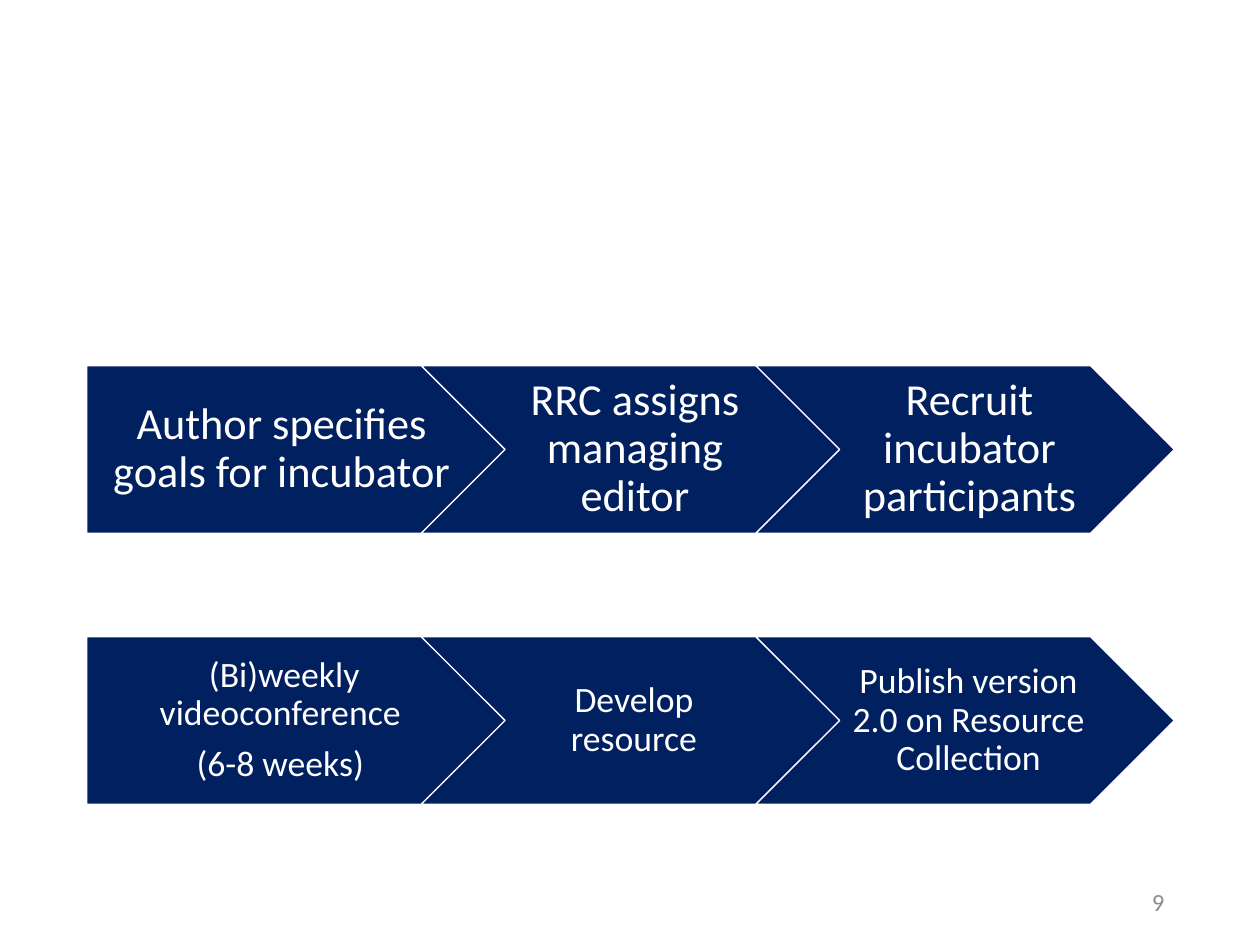
from dataclasses import dataclass

from pptx import Presentation
from pptx.dml.color import RGBColor as RGB
from pptx.enum.shapes import MSO_SHAPE as SHAPE
from pptx.enum.text import MSO_ANCHOR as ANCHOR, PP_ALIGN as ALIGN
from pptx.util import Inches, Pt


@dataclass(frozen=True)
class Theme:
    font: str = "Calibri"
    navy: RGB = RGB(0x00, 0x20, 0x60)
    white: RGB = RGB(0xFF, 0xFF, 0xFF)
    gray: RGB = RGB(0x8C, 0x8C, 0x8C)
    large: int = 36
    small: int = 29
    page: int = 20


THEME = Theme()

# Arrow grid: each step starts at 80 % of the one before
LEFT, WIDE, HIGH = 0.98, 4.72, 1.89
STEP = WIDE * 0.8

# Top, type size, inset unit, and the paragraphs of each step
ROWS = [
    (4.13, THEME.large, 0.05, [
        ["Author specifies goals for incubator"],
        ["RRC assigns managing editor"],
        ["Recruit incubator participants"],
    ]),
    (7.19, THEME.small, 0.04, [
        [" (Bi)weekly videoconference", "(6-8 weeks)"],
        ["Develop resource"],
        ["Publish version 2.0 on Resource Collection"],
    ]),
]


def add_run(para, text, size, color):
    run = para.add_run()
    run.text = text
    run.font.name = THEME.font
    run.font.size = Pt(size)
    run.font.color.rgb = color


def add_step(group, kind, left, top, lines, size, pad):
    step = group.shapes.add_shape(
        kind, Inches(left), Inches(top), Inches(WIDE), Inches(HIGH))
    step.shadow.inherit = False
    step.fill.solid()
    step.fill.fore_color.rgb = THEME.navy
    step.line.color.rgb = THEME.white
    step.line.width = Pt(1)

    # Insets grow with the type size
    frame = step.text_frame
    frame.word_wrap = True
    frame.vertical_anchor = ANCHOR.MIDDLE
    frame.margin_left = Inches(pad * (4 if kind == SHAPE.PENTAGON else 3))
    frame.margin_right = Inches(pad)
    frame.margin_top = frame.margin_bottom = Inches(pad * 2)

    for i, line in enumerate(lines):
        para = frame.add_paragraph() if i else frame.paragraphs[0]
        para.alignment = ALIGN.CENTER
        para.line_spacing = 0.9
        para.space_after = Pt(round(size * 0.35))
        add_run(para, line, size, THEME.white)


def add_row(slide, top, size, pad, steps):
    group = slide.shapes.add_group_shape()
    for i, lines in enumerate(steps):
        kind = SHAPE.CHEVRON if i else SHAPE.PENTAGON
        add_step(group, kind, LEFT + i * STEP, top, lines, size, pad)


def add_page(slide, text):
    box = slide.shapes.add_textbox(
        Inches(10.04), Inches(9.89), Inches(3.2), Inches(0.57))
    frame = box.text_frame
    frame.word_wrap = True
    frame.vertical_anchor = ANCHOR.MIDDLE
    para = frame.paragraphs[0]
    para.alignment = ALIGN.RIGHT
    add_run(para, text, THEME.page, THEME.gray)


def main():
    deck = Presentation()
    deck.slide_width = Inches(14.22)
    deck.slide_height = Inches(10.67)

    # No title shows, so the blank layout fits
    slide = deck.slides.add_slide(deck.slide_layouts[6])

    # Process rows
    for row in ROWS:
        add_row(slide, *row)

    # Page number
    add_page(slide, "9")
    deck.save("out.pptx")


if __name__ == "__main__":
    main()
